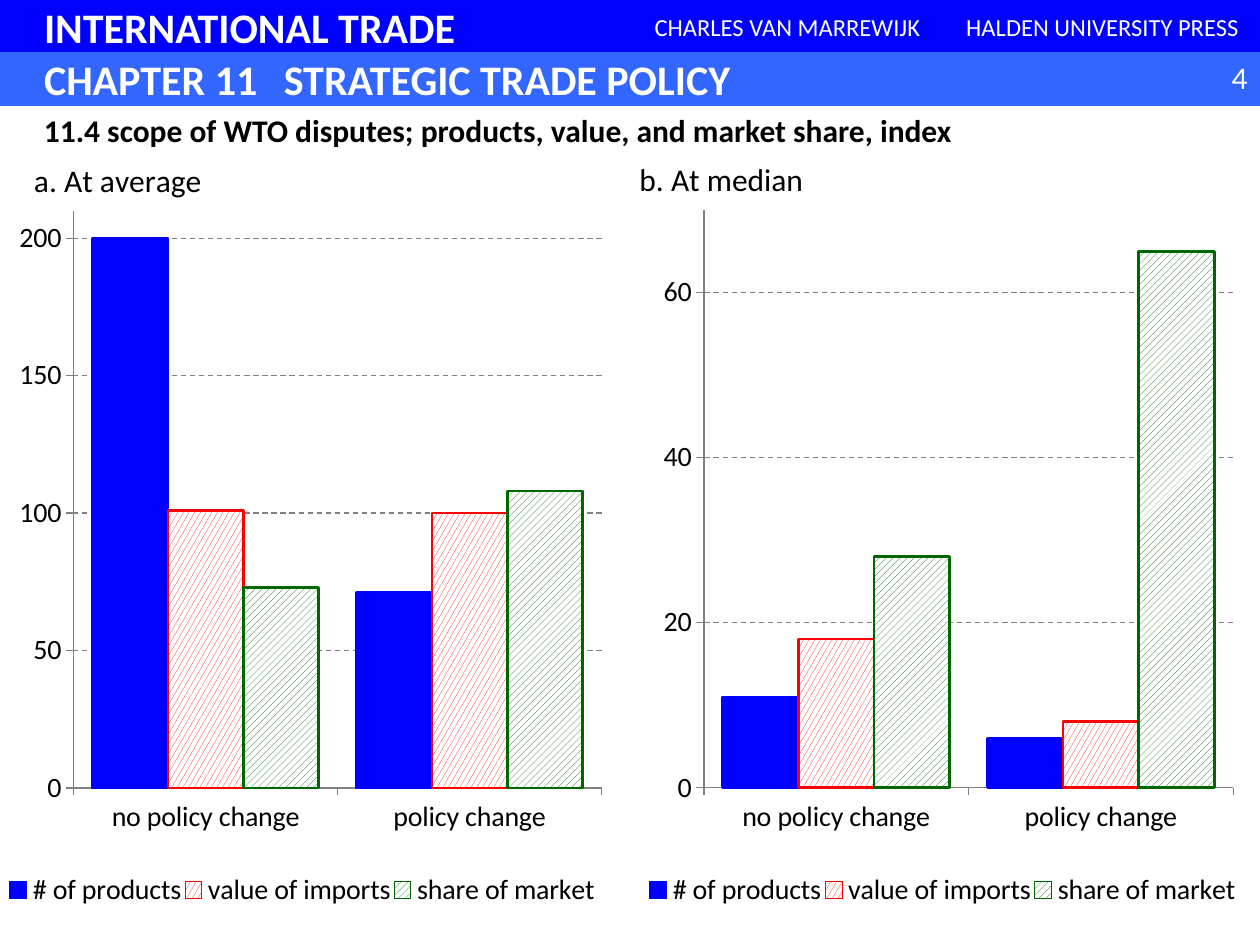
from dataclasses import dataclass

from pptx import Presentation
from pptx.chart.data import CategoryChartData
from pptx.dml.color import RGBColor
from pptx.enum.chart import XL_CHART_TYPE, XL_LEGEND_POSITION, XL_TICK_MARK
from pptx.enum.dml import MSO_LINE, MSO_PATTERN
from pptx.enum.shapes import MSO_SHAPE
from pptx.enum.text import MSO_ANCHOR, PP_ALIGN
from pptx.oxml import parse_xml
from pptx.oxml.ns import nsdecls
from pptx.util import Pt

COLUMNS = XL_CHART_TYPE.COLUMN_CLUSTERED
BOTTOM = XL_LEGEND_POSITION.BOTTOM
TICK_OUT = XL_TICK_MARK.OUTSIDE
DASH = MSO_LINE.DASH
CONFETTI = MSO_PATTERN.LARGE_CONFETTI
DIAGONAL = MSO_PATTERN.WIDE_UPWARD_DIAGONAL
RECTANGLE = MSO_SHAPE.RECTANGLE
MIDDLE, TOP = MSO_ANCHOR.MIDDLE, MSO_ANCHOR.TOP
LEFT, CENTER, RIGHT = PP_ALIGN.LEFT, PP_ALIGN.CENTER, PP_ALIGN.RIGHT


@dataclass(frozen=True)
class Theme:
    font: str = "Calibri"
    white: RGBColor = RGBColor(255, 255, 255)
    black: RGBColor = RGBColor(0, 0, 0)
    blue: RGBColor = RGBColor(0, 0, 255)
    light_blue: RGBColor = RGBColor(0x33, 0x66, 0xFF)
    red: RGBColor = RGBColor(255, 0, 0)
    green: RGBColor = RGBColor(0, 0x66, 0)
    gray: RGBColor = RGBColor(0x80, 0x80, 0x80)
    banner_size: int = 24
    heading_size: int = 18
    label_size: int = 16
    credit_size: int = 14
    chart_size: int = 10


THEME = Theme()
WIDTH, HEIGHT = 720, 540
BAND = 30
INDENT = 25.2
CATEGORIES = ("no policy change", "policy change")
# Series name, colour and pattern (None for a solid fill)
SERIES_STYLES = (
    ("# of products", THEME.blue, None),
    ("value of imports", THEME.red, CONFETTI),
    ("share of market", THEME.green, DIAGONAL),
)


def style_font(font, size, color=THEME.black, bold=False):
    font.name = THEME.font
    font.size = Pt(size)
    font.bold = bold
    font.color.rgb = color


def write(box, text, size, color, bold=False, align=LEFT, anchor=TOP, indent=7.2):
    frame = box.text_frame
    frame.word_wrap = True
    frame.vertical_anchor = anchor
    frame.margin_left = Pt(indent)
    para = frame.paragraphs[0]
    para.text = text
    para.alignment = align
    for span in para.runs:
        style_font(span.font, size, color, bold)
    return para


def add_band(page, place, color, text, size, **options):
    box = page.shapes.add_shape(RECTANGLE, *map(Pt, place))
    box.shadow.inherit = False
    box.fill.solid()
    box.fill.fore_color.rgb = color
    box.line.color.rgb = color
    box.line.width = Pt(0.75)
    return write(box, text, size, THEME.white, anchor=MIDDLE, **options)


def add_text(page, place, text, color, **options):
    box = page.shapes.add_textbox(*map(Pt, place))
    write(box, text, THEME.heading_size, color, **options)


def add_tab_stop(para, position):
    para._p.get_or_add_pPr().append(parse_xml(
        f'<a:tabLst {nsdecls("a")}><a:tab pos="{Pt(position)}" algn="l"/></a:tabLst>'))


def set_layout(chart, part, index, x, y, size=None):
    """Place a chart part by fractions of the chart's own size."""
    element = chart.element.xpath(f".//c:{part}")[0]
    for old in element.xpath("./c:layout"):
        element.remove(old)
    values = [("xMode", "edge"), ("yMode", "edge"), ("x", x), ("y", y)]
    if part == "plotArea":
        values.insert(0, ("layoutTarget", "inner"))
    if size:
        values += zip("wh", size)
    body = "".join(f'<c:{name} val="{value}"/>' for name, value in values)
    element.insert(index, parse_xml(
        f'<c:layout {nsdecls("c")}><c:manualLayout>{body}</c:manualLayout></c:layout>'))


def style_axis(axis):
    axis.major_tick_mark = TICK_OUT
    axis.format.line.color.rgb = THEME.gray
    style_font(axis.tick_labels.font, THEME.label_size)


def style_series(series, color, pattern):
    fill = series.format.fill
    if pattern is None:
        fill.solid()
    else:
        fill.patterned()
        fill.pattern = pattern
        fill.back_color.rgb = THEME.white
    fill.fore_color.rgb = color
    series.invert_if_negative = False
    series.format.line.color.rgb = color
    series.format.line.width = Pt(1.5)


def add_column_chart(page, place, title, rows, maximum, step, title_x, legend_x):
    data = CategoryChartData(number_format="0")
    data.categories = CATEGORIES
    for (name, _, _), values in zip(SERIES_STYLES, rows):
        data.add_series(name, values)
    chart = page.shapes.add_chart(COLUMNS, *map(Pt, place), data).chart
    style_font(chart.font, THEME.chart_size)

    # Title and legend
    chart.has_title = True
    para = chart.chart_title.text_frame.paragraphs[0]
    para.text = title
    style_font(para.runs[0].font, THEME.heading_size)
    chart.has_legend = True
    chart.legend.position = BOTTOM
    chart.legend.include_in_layout = False
    style_font(chart.legend.font, THEME.label_size)

    # Axes
    style_axis(chart.category_axis)
    axis = chart.value_axis
    style_axis(axis)
    axis.minimum_scale, axis.maximum_scale, axis.major_unit = 0, maximum, step
    axis.tick_labels.number_format = "0"
    axis.tick_labels.number_format_is_linked = False
    grid = axis.major_gridlines.format.line
    grid.color.rgb = THEME.gray
    grid.width = Pt(0.75)
    grid.dash_style = DASH

    # Columns
    plot = chart.plots[0]
    plot.gap_width = 50
    plot.overlap = 0
    plot.vary_by_categories = False
    for series, (_, color, pattern) in zip(plot.series, SERIES_STYLES):
        style_series(series, color, pattern)

    set_layout(chart, "title", 1, title_x, 0.056)
    set_layout(chart, "plotArea", 0, 0.117, 0.125, (0.838, 0.688))
    set_layout(chart, "legend", 1, legend_x, 0.91, (0.94, 0.05))


def main():
    deck = Presentation()
    deck.slide_width, deck.slide_height = Pt(WIDTH), Pt(HEIGHT)
    page = deck.slides.add_slide(deck.slide_layouts[6])

    # Header bands
    add_band(page, (0, 0, WIDTH, BAND), THEME.blue, "INTERNATIONAL TRADE",
             THEME.banner_size, bold=True, indent=INDENT)
    for left, credit in ((360, "CHARLES VAN MARREWIJK"), (540, "HALDEN UNIVERSITY PRESS")):
        add_band(page, (left, 0, 180, BAND), THEME.blue, credit,
                 THEME.credit_size, align=CENTER)
    chapter = add_band(page, (0, BAND, WIDTH, BAND), THEME.light_blue,
                       "CHAPTER 11\tSTRATEGIC TRADE POLICY",
                       THEME.banner_size, bold=True, indent=INDENT)
    add_tab_stop(chapter, 137)
    add_text(page, (672, 29.5, 48, 29), "4", THEME.white, align=RIGHT)

    # Charts and heading
    add_column_chart(page, (0, 60.5, 360, 479.5), "a. At average",
                     ((200, 71), (101, 100), (73, 108)), 210, 50, 0.045, 0.01)
    add_text(page, (18, 60, 564, 29),
             "11.4 scope of WTO disputes; products, value, and market share, index",
             THEME.black, bold=True)
    add_column_chart(page, (360, 60, 361, 480), "b. At median",
                     ((11, 6), (18, 8), (28, 65)), 70, 20, 0.006, 0.025)

    deck.save("out.pptx")


if __name__ == "__main__":
    main()
